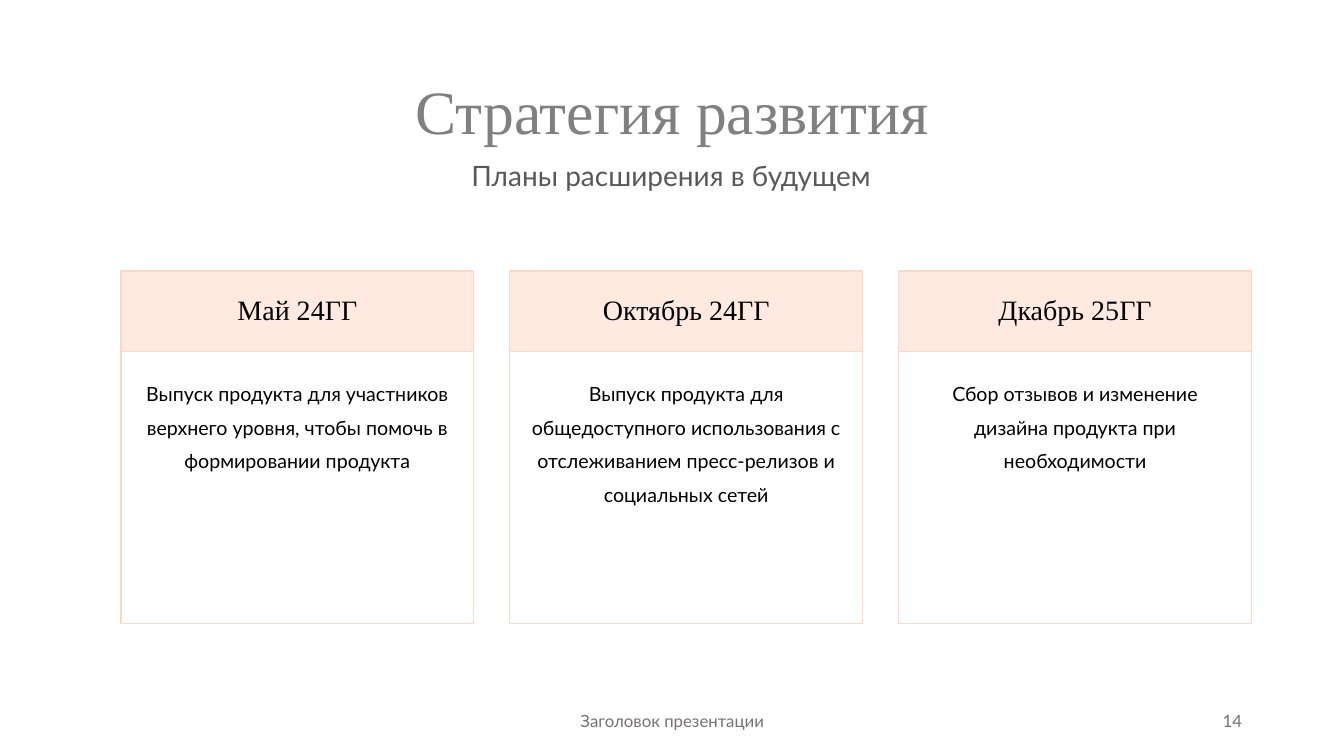
from lxml import etree
from pptx import Presentation
from pptx.dml.color import RGBColor
from pptx.enum.shapes import MSO_SHAPE
from pptx.enum.text import MSO_ANCHOR as Anchor, PP_ALIGN as Align
from pptx.oxml.ns import qn
from pptx.util import Cm, Pt

COLORS = {
    "title": "808080",
    "subtitle": "595959",
    "card": "FFD7C7",
    "text": "000000",
    "footer": "767171",
}
SERIF, SANS = "Times New Roman", "Lato"

STAGES = [
    ("Май 24ГГ",
     "Выпуск продукта для участников верхнего уровня, чтобы помочь в формировании продукта"),
    ("Октябрь 24ГГ",
     "Выпуск продукта для общедоступного использования с отслеживанием "
     "пресс-релизов и социальных сетей"),
    ("Дкабрь 25ГГ",
     "Сбор отзывов и изменение дизайна продукта при необходимости"),
]
CARD_LEFT, CARD_STEP, CARD_WIDTH = 3.05, 9.8, 8.89
HEADER_TOP, HEADER_HEIGHT, BODY_HEIGHT = 6.83, 2.03, 6.86


def write(shape, text, size, font, color, anchor=Anchor.TOP, align=Align.CENTER,
          spacing=None, before=0, insets=(0.25, 0.13, 0.25, 0.13)):
    """Put one formatted paragraph in the shape; insets are left, top, right, bottom in cm."""
    frame = shape.text_frame
    frame.text = text
    frame.word_wrap = True
    frame.vertical_anchor = anchor
    (frame.margin_left, frame.margin_top,
     frame.margin_right, frame.margin_bottom) = map(Cm, insets)
    paragraph = frame.paragraphs[0]
    paragraph.alignment = align
    paragraph.line_spacing = spacing
    paragraph.space_before = Pt(before)
    run_font = paragraph.runs[0].font
    run_font.name, run_font.size = font, Pt(size)
    run_font.color.rgb = RGBColor.from_string(COLORS[color])


def add_card_box(left, top, height):
    box = slide.shapes.add_shape(
        MSO_SHAPE.RECTANGLE, Cm(left), Cm(top), Cm(CARD_WIDTH), Cm(height))
    box.shadow.inherit = False
    box.fill.background()
    box.line.color.rgb = RGBColor.from_string(COLORS["card"])
    box.line.width = Pt(0.75)
    return box


prs = Presentation()
prs.slide_width, prs.slide_height = Cm(33.87), Cm(19.05)
slide = prs.slides.add_slide(prs.slide_layouts[6])

title = slide.shapes.add_textbox(Cm(2.34), Cm(1.02), Cm(29.21), Cm(2.95))
write(title, "Стратегия развития", 44, SERIF, "title", Anchor.BOTTOM,
      spacing=0.9, insets=(0.25, 0.13, 0.25, 0.25))

subtitle = slide.shapes.add_textbox(Cm(2.31), Cm(3.96), Cm(29.21), Cm(1.27))
write(subtitle, "Планы расширения в будущем", 20, SANS, "subtitle", spacing=0.9, before=10)

for index, (date, plan) in enumerate(STAGES):
    left = CARD_LEFT + index * CARD_STEP

    header = add_card_box(left, HEADER_TOP, HEADER_HEIGHT)
    header.fill.solid()
    header.fill.fore_color.rgb = RGBColor.from_string(COLORS["card"])
    fill_color = header.fill._xPr.find(qn("a:solidFill")).find(qn("a:srgbClr"))
    etree.SubElement(fill_color, qn("a:alpha"), val="50000")
    write(header, date, 20, SERIF, "text", Anchor.MIDDLE, spacing=0.9, before=10)

    body = add_card_box(left, HEADER_TOP + HEADER_HEIGHT, BODY_HEIGHT)
    write(body, plan, 14, SANS, "text", spacing=Pt(24), insets=(0.51, 0.51, 0.51, 0.13))

footer = slide.shapes.add_textbox(Cm(11.23), Cm(17.65), Cm(11.43), Cm(1.02))
write(footer, "Заголовок презентации", 12, SANS, "footer", Anchor.MIDDLE)

page_number = slide.shapes.add_textbox(Cm(23.93), Cm(17.65), Cm(7.62), Cm(1.02))
write(page_number, "14", 12, SANS, "footer", Anchor.MIDDLE, Align.RIGHT)

prs.save("out.pptx")
